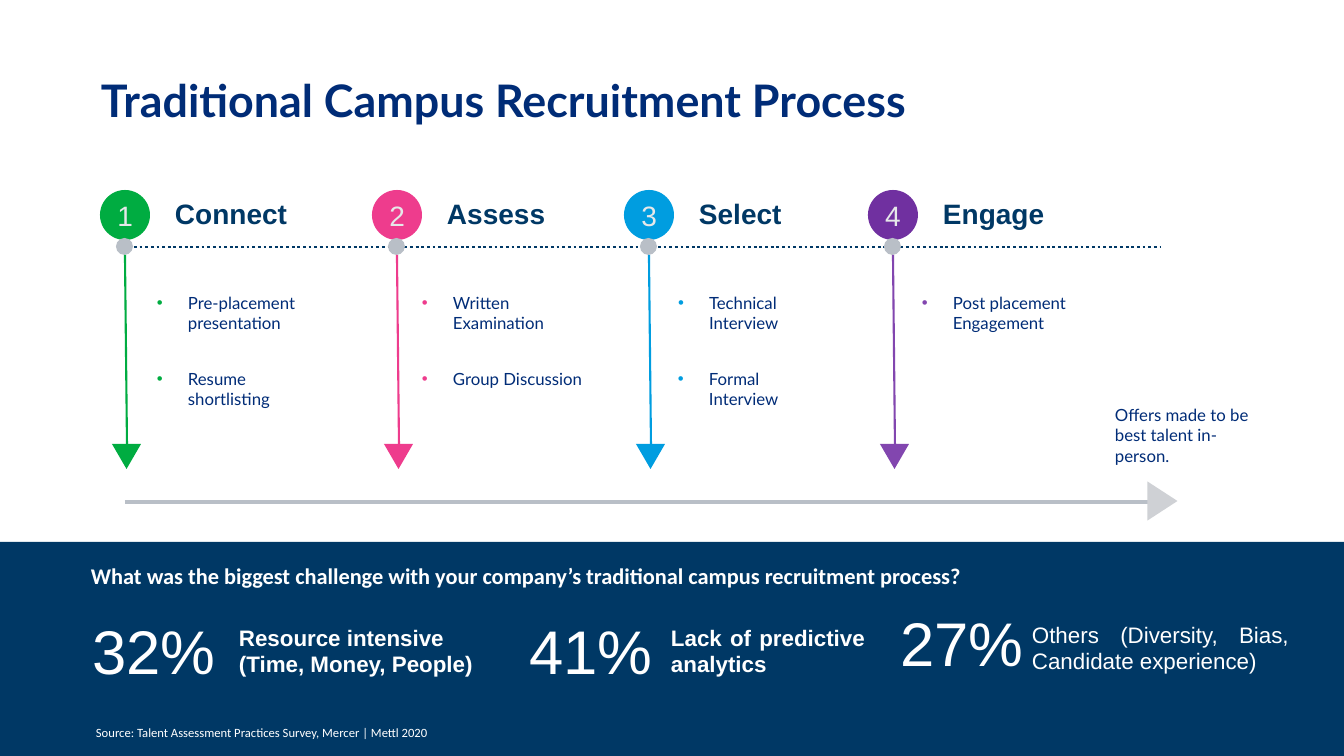
from pptx import Presentation
from pptx.dml.color import RGBColor
from pptx.enum.dml import MSO_LINE
from pptx.enum.shapes import MSO_CONNECTOR, MSO_SHAPE
from pptx.enum.text import MSO_ANCHOR, PP_ALIGN
from pptx.oxml.ns import qn
from pptx.util import Emu, Pt
from lxml.etree import SubElement

NAVY = RGBColor(0x00, 0x38, 0x65)
BLUE = RGBColor(0x00, 0x2C, 0x77)
GREEN = RGBColor(0x00, 0xAC, 0x41)
PINK = RGBColor(0xEE, 0x3C, 0x8D)
SKY = RGBColor(0x00, 0x9D, 0xE0)
PURPLE = RGBColor(0x70, 0x30, 0xA0)
VIOLET = RGBColor(0x82, 0x46, 0xAF)
GREY = RGBColor(0xB9, 0xBF, 0xC7)
SILVER = RGBColor(0xCF, 0xD1, 0xD5)
PALE = RGBColor(0xE6, 0xE8, 0xE9)
WHITE = RGBColor(0xFF, 0xFF, 0xFF)

TITLE = "Traditional Campus Recruitment Process"
STEPS = [
    ("Connect", 125, GREEN, GREEN, 147,
     [("Pre-placement presentation", 240), ("Resume shortlisting", 187)]),
    ("Assess", 397, PINK, PINK, 412,
     [("Written Examination", 187), ("Group Discussion", 187)]),
    ("Select", 649, SKY, SKY, 668,
     [("Technical Interview", 176), ("Formal Interview", 162)]),
    ("Engage", 893, PURPLE, VIOLET, 912,
     [("Post placement Engagement", 240)]),
]
OFFER = "Offers made to be best talent in-person."
ASK = "What was the biggest challenge with your company’s traditional campus recruitment process?"
STATS = [
    ("32%", 40, 588, "Resource intensive (Time, Money, People)", 239, 596, 272, True, PP_ALIGN.LEFT),
    ("41%", 477, 588, "Lack of predictive analytics", 671, 596, 204, True, PP_ALIGN.JUSTIFY),
    ("27%", 848, 580, "Others (Diversity, Bias, Candidate experience)", 1032, 593, 267, False, PP_ALIGN.JUSTIFY),
]
SOURCE = "Source: Talent Assessment Practices Survey, Mercer | Mettl 2020"


def px(n):
    return Emu(round(n * 914400 / 100.8))


def write(shape, text, size, font, color, bold=False, align=PP_ALIGN.LEFT,
          anchor=MSO_ANCHOR.TOP, pads=(10, 5, 10, 5), dot=None):
    frame = shape.text_frame
    frame.word_wrap = True
    frame.vertical_anchor = anchor
    frame.margin_left, frame.margin_top, frame.margin_right, frame.margin_bottom = map(px, pads)
    para = frame.paragraphs[0]
    para.alignment = align
    if dot is not None:
        props = para._p.get_or_add_pPr()
        props.set("marL", str(px(31)))
        props.set("indent", str(px(-31)))
        tint = SubElement(props, qn("a:buClr"))
        SubElement(tint, qn("a:srgbClr")).set("val", str(dot))
        SubElement(props, qn("a:buFont")).set("typeface", "Arial")
        SubElement(props, qn("a:buChar")).set("char", "•")
    run = para.add_run()
    run.text = text
    run.font.size = Pt(size)
    run.font.name = font
    run.font.bold = bold
    run.font.color.rgb = color
    return para


def label(x, y, w, h, *args, **opts):
    return write(slide.shapes.add_textbox(px(x), px(y), px(w), px(h)), *args, **opts)


def shape(kind, x, y, w, h, fill, turn=0):
    item = slide.shapes.add_shape(kind, px(x), px(y), px(w), px(h))
    item.shadow.inherit = False
    item.fill.solid()
    item.fill.fore_color.rgb = fill
    item.line.fill.background()
    item.rotation = turn
    return item


def line(x1, y1, x2, y2, color, width, dash=None):
    item = slide.shapes.add_connector(MSO_CONNECTOR.STRAIGHT, px(x1), px(y1), px(x2), px(y2))
    item.line.color.rgb = color
    item.line.width = Pt(width)
    if dash is not None:
        item.line.dash_style = dash
    SubElement(item._element.spPr, qn("a:effectLst"))


deck = Presentation()
deck.slide_width, deck.slide_height = px(1344), px(756)
slide = deck.slides.add_slide(deck.slide_layouts[5])

title = slide.shapes.title
title.left, title.top, title.width, title.height = px(101), px(76), px(1177), px(44)
write(title, TITLE, 32, "Lato", BLUE, True, pads=(0, 0, 0, 0)).line_spacing = Pt(36)

shape(MSO_SHAPE.RECTANGLE, 0, 542, 1344, 214, NAVY)
line(125, 502, 1160, 502, GREY, 2.25)
line(134, 247, 1160, 247, NAVY, 2, MSO_LINE.ROUND_DOT)

for num, (name, mid, color, tone, left, items) in enumerate(STEPS, 1):
    disc = shape(MSO_SHAPE.OVAL, mid - 25, 190, 50, 50, color)
    write(disc, str(num), 20, "Arial", PALE, align=PP_ALIGN.CENTER, anchor=MSO_ANCHOR.MIDDLE)
    shape(MSO_SHAPE.OVAL, mid - 9, 238, 17, 17, GREY)
    label(mid + 40, 191, 170, 44, name, 20, "Arial", NAVY, True)
    line(mid, 255, mid + 2, 445, tone, 1.5)
    shape(MSO_SHAPE.ISOSCELES_TRIANGLE, mid - 13, 444, 29, 25, tone, 180)
    for row, (text, wide) in enumerate(items):
        label(left, 288 + 76 * row, wide, 50, text, 12, "Lato", BLUE, dot=tone)

shape(MSO_SHAPE.ISOSCELES_TRIANGLE, 1143, 486, 39, 30, SILVER, 90)
label(1105, 400, 157, 72, OFFER, 12, "Lato", BLUE)

label(81, 547, 1051, 57, ASK, 16, "Calibri", WHITE, True, anchor=MSO_ANCHOR.MIDDLE)
for rate, x, y, text, left, top, wide, bold, align in STATS:
    label(x, y, 238, 124, rate, 44, "Arial", WHITE, align=PP_ALIGN.CENTER,
          anchor=MSO_ANCHOR.MIDDLE, pads=(0, 5, 10, 5))
    label(left, top, wide, 109, text, 16, "Arial", WHITE, bold, align,
          MSO_ANCHOR.MIDDLE, (0, 5, 10, 5))
label(96, 725, 561, 20, SOURCE, 9, "Calibri", WHITE, pads=(0, 0, 0, 0))

deck.save("out.pptx")
